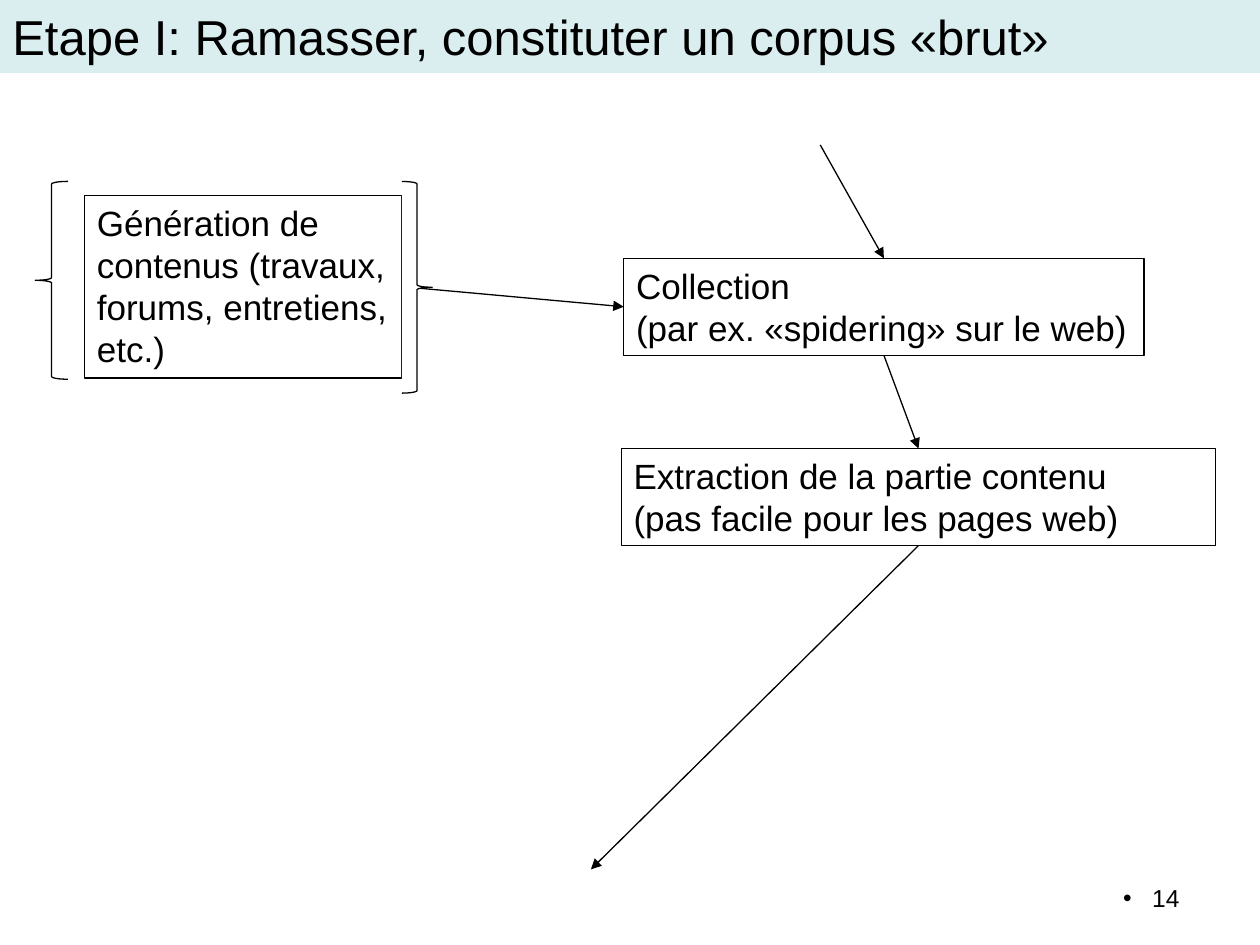
from pptx import Presentation, util as u
from pptx.dml.color import RGBColor
from pptx.enum import shapes as sh, text as tx
from pptx.oxml.ns import qn
from lxml import etree

BLACK = RGBColor(0, 0, 0)
WHITE = RGBColor(255, 255, 255)
PALE = RGBColor(0xDA, 0xED, 0xEF)
COLS, ROWS = 100, 75
WIDE, HIGH = u.Inches(10), u.Inches(7.5)


def grid(x, y):
    return round(x * WIDE / COLS), round(y * HIGH / ROWS)


def place(box):
    x, y, w, h = box
    return *grid(x, y), *grid(w, h)


def top(box):
    x, y, w, h = box
    return x + w / 2, y


def base(box):
    x, y, w, h = box
    return x + w / 2, y + h


def left(box):
    x, y, w, h = box
    return x, y + h / 2


def right(box):
    x, y, w, h = box
    return x + w, y + h / 2


def write(shape, words, size=20, align=tx.PP_ALIGN.LEFT, wrap=True,
          anchor=tx.MSO_ANCHOR.TOP, space=None):
    frame = shape.text_frame
    frame.word_wrap = wrap
    frame.vertical_anchor = anchor
    frame.text = words
    for para in frame.paragraphs:
        para.alignment = align
        para.line_spacing = space
        for run in para.runs:
            run.font.name = "Arial"
            run.font.size = u.Pt(size)
            run.font.color.rgb = BLACK
    return frame


def draw(slide, kind, box, fill=None, edge=BLACK, width=0.75):
    shape = slide.shapes.add_shape(kind, *place(box))
    shape.shadow.inherit = False
    if fill is None:
        shape.fill.background()
    else:
        shape.fill.solid()
        shape.fill.fore_color.rgb = fill
    shape.line.color.rgb = edge
    shape.line.width = u.Pt(width)
    return shape


def arrow(slide, start, end):
    link = slide.shapes.add_connector(
        sh.MSO_CONNECTOR.STRAIGHT, *grid(*start), *grid(*end))
    link.line.color.rgb = BLACK
    link.line.width = u.Pt(0.75)
    etree.SubElement(link.line._get_or_add_ln(), qn("a:tailEnd"), type="triangle")
    etree.SubElement(link._element.spPr, qn("a:effectLst"))


def foot(slide, box):
    shape = slide.shapes.add_textbox(*place(box))
    frame = write(shape, "14", size=14, align=tx.PP_ALIGN.RIGHT, space=0.93)
    props = frame.paragraphs[0]._p.get_or_add_pPr()
    inset = u.Inches(0.23)
    props.set("marL", str(inset))
    props.set("indent", str(-inset))
    etree.SubElement(props, qn("a:buFont"), typeface="Arial")
    etree.SubElement(props, qn("a:buChar"), char="•")


def head(slide, box):
    shape = draw(slide, sh.MSO_SHAPE.RECTANGLE, box, PALE, PALE, 1)
    write(shape, "Etape I: Ramasser, constituter un corpus «brut»", size=28,
          anchor=tx.MSO_ANCHOR.MIDDLE)


def step(slide, box, words, wrap=True):
    write(draw(slide, sh.MSO_SHAPE.RECTANGLE, box), words, wrap=wrap)


def brace(slide, box):
    x, y, w, h = box
    draw(slide, sh.MSO_SHAPE.LEFT_BRACE, (x - 3.9, y - 1.1, 2.6, h + 1.2))
    draw(slide, sh.MSO_SHAPE.RIGHT_BRACE, (x + w, y - 1.1, 2.4, h + 2.3), WHITE)


def flow(slide, box):
    x, y, w, h = box
    start = (x, y + 4, 25.2, 14.5)
    pick = (x + 42.8, y + 9, 41.3, 7.7)
    clean = (x + 42.6, y + 24.1, 47.2, 7.7)
    step(slide, start, "Génération de contenus (travaux, forums, entretiens, etc.)")
    step(slide, pick, "Collection\n(par ex. «spidering» sur le web)", wrap=False)
    step(slide, clean, "Extraction de la partie contenu\v(pas facile pour les pages web)")
    arrow(slide, right(start), left(pick))
    arrow(slide, base(pick), top(clean))
    arrow(slide, base(clean), (x + 40.2, y + h))
    brace(slide, start)
    arrow(slide, (x + 58.4, y), top(pick))


def main():
    deck = Presentation()
    deck.slide_width, deck.slide_height = WIDE, HIGH
    slide = deck.slides.add_slide(deck.slide_layouts[6])
    foot(slide, (71.3, 69.8, 23.3, 3.1))
    head(slide, (0, 0, COLS, 5.7))
    flow(slide, (6.7, 11.5, 89.8, 57.5))
    deck.save("out.pptx")


if __name__ == "__main__":
    main()
